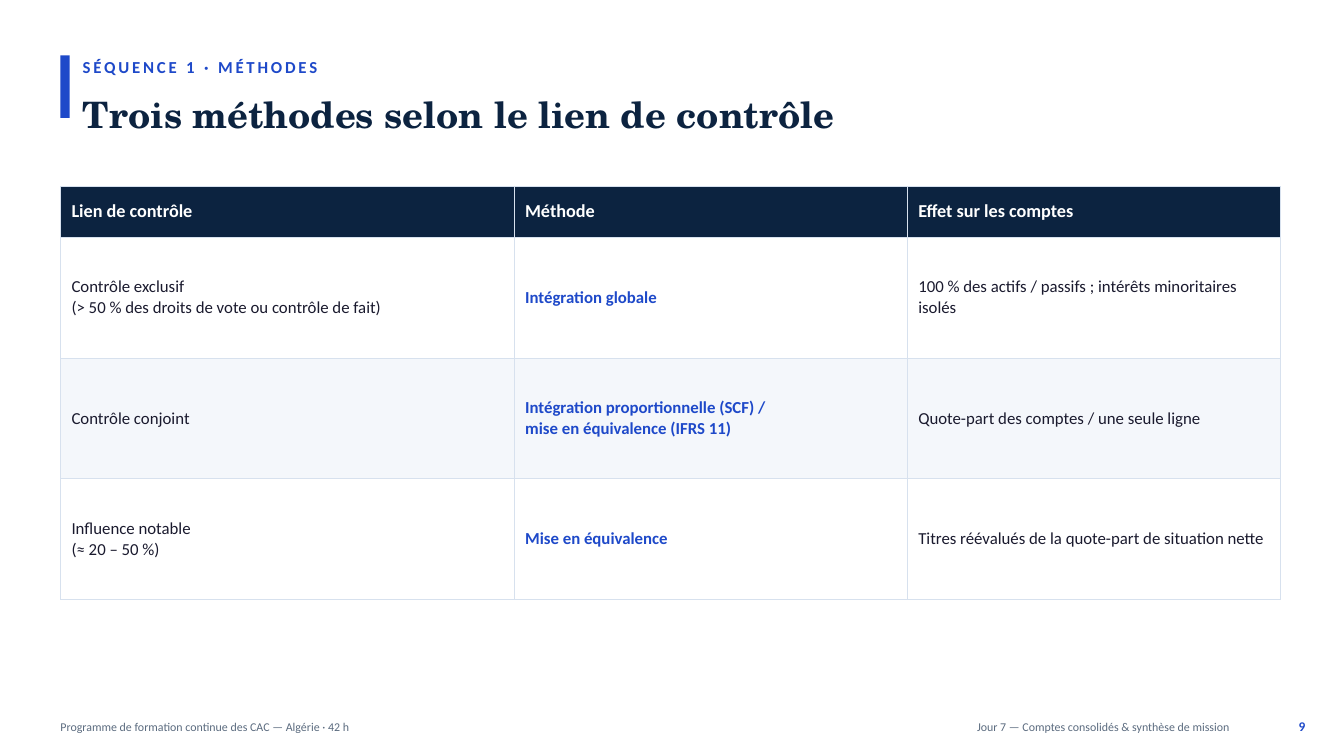
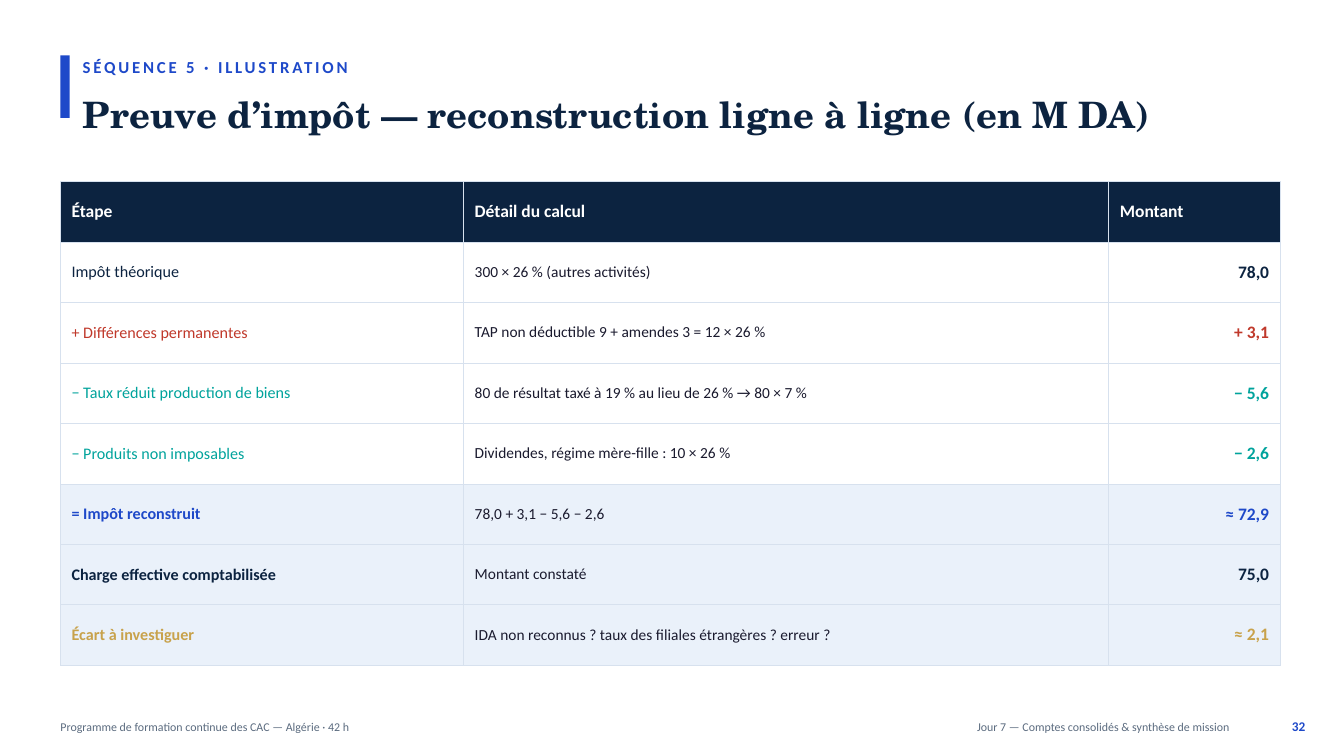
from lxml.etree import SubElement
from pptx import Presentation
from pptx.dml.color import RGBColor
from pptx.enum.shapes import MSO_SHAPE
from pptx.enum.text import MSO_ANCHOR, MSO_AUTO_SIZE, PP_ALIGN
from pptx.oxml.ns import qn
from pptx.util import Pt

NAVY = RGBColor(0x0C, 0x23, 0x40)
BLUE = RGBColor(0x1E, 0x49, 0xC9)
INK = RGBColor(0x1A, 0x1A, 0x2E)
SLATE = RGBColor(0x5B, 0x6B, 0x7F)
RED = RGBColor(0xC0, 0x39, 0x2B)
TEAL = RGBColor(0x00, 0xA3, 0x9C)
GOLD = RGBColor(0xC8, 0xA2, 0x4B)
WHITE = RGBColor(0xFF, 0xFF, 0xFF)
PALE = RGBColor(0xF4, 0xF7, 0xFB)
PALE_BLUE = RGBColor(0xEA, 0xF1, 0xFA)
BORDER = RGBColor(0xD7, 0xE1, 0xEE)

BODY_FONT = "Calibri"
TITLE_FONT = "TeX Gyre Schola"
LEFT = 43.2
HEADING_LEFT = 59.04
FOOTER_TOP = 508.32
FOOTER_LEFT_TEXT = "Programme de formation continue des CAC — Algérie · 42 h"
FOOTER_RIGHT_TEXT = "Jour 7 — Comptes consolidés & synthèse de mission"


def write_text(text_frame, text, size=12, color=INK, bold=False, font=BODY_FONT,
               align=PP_ALIGN.LEFT, spacing=None):
    """Write one paragraph per line of text, all in the same format."""
    for index, line in enumerate(text.split("\n")):
        paragraph = text_frame.add_paragraph() if index else text_frame.paragraphs[0]
        paragraph.alignment = align
        run = paragraph.add_run()
        run.text = line
        run.font.name = font
        run.font.size = Pt(size)
        run.font.bold = bold
        run.font.color.rgb = color
        if spacing:
            run.font._element.set("spc", str(spacing * 100))


def place_text(shape, box, text, **text_format):
    """Fit a text shape to its box, without insets, and write in it."""
    shape.left, shape.top, shape.width, shape.height = map(Pt, box)
    frame = shape.text_frame
    frame.word_wrap = True
    frame.auto_size = MSO_AUTO_SIZE.NONE
    frame.vertical_anchor = MSO_ANCHOR.MIDDLE
    frame.margin_left = frame.margin_top = frame.margin_right = frame.margin_bottom = 0
    write_text(frame, text, **text_format)


def add_text(slide, box, text, **text_format):
    place_text(slide.shapes.add_textbox(0, 0, 0, 0), box, text, **text_format)


def add_heading(slide, section, title):
    bar = slide.shapes.add_shape(MSO_SHAPE.RECTANGLE, Pt(LEFT), Pt(39.6), Pt(6.48), Pt(44.64))
    bar.shadow.inherit = False
    bar.fill.solid()
    bar.fill.fore_color.rgb = BLUE
    bar.line.fill.background()
    add_text(slide, (HEADING_LEFT, 36, 756, 23.04), section,
             color=BLUE, bold=True, spacing=2)
    place_text(slide.shapes.title, (HEADING_LEFT, 56.16, 856.8, 50.4), title,
               size=26, color=NAVY, bold=True, font=TITLE_FONT)


def add_footer(slide, number):
    add_text(slide, (LEFT, FOOTER_TOP, 576, 21.6), FOOTER_LEFT_TEXT, size=8.5, color=SLATE)
    add_text(slide, (590.4, FOOTER_TOP, 288, 21.6), FOOTER_RIGHT_TEXT,
             size=8.5, color=SLATE, align=PP_ALIGN.RIGHT)
    add_text(slide, (896.4, 506.88, 36, 23.04), str(number),
             size=9.5, color=BLUE, bold=True, align=PP_ALIGN.RIGHT)


def add_borders(cell):
    properties = cell._tc.get_or_add_tcPr()
    for index, side in enumerate(("a:lnL", "a:lnR", "a:lnT", "a:lnB")):
        line = SubElement(properties, qn(side), w=str(Pt(0.5)))
        fill = SubElement(line, qn("a:solidFill"))
        SubElement(fill, qn("a:srgbClr"), val=str(BORDER))
        properties.insert(index, line)


def add_table(slide, top, widths, heights, rows, margin):
    """Draw rows given as (fill, [(text, format), ...])."""
    table = slide.shapes.add_table(len(heights), len(widths), Pt(LEFT), Pt(top),
                                   Pt(sum(widths)), Pt(sum(heights))).table
    table.first_row = table.horz_banding = False
    for column, width in zip(table.columns, widths):
        column.width = Pt(width)
    for row, height, (fill, contents) in zip(table.rows, heights, rows):
        row.height = Pt(height)
        for cell, (text, text_format) in zip(row.cells, contents):
            cell.fill.solid()
            cell.fill.fore_color.rgb = fill
            add_borders(cell)
            cell.margin_left = cell.margin_right = Pt(7.92)
            cell.margin_top = cell.margin_bottom = Pt(margin)
            cell.vertical_anchor = MSO_ANCHOR.MIDDLE
            write_text(cell.text_frame, text, **text_format)


def header_row(labels, size):
    return NAVY, [(label, dict(size=size, color=WHITE, bold=True)) for label in labels]


def add_content_slide(presentation, section, title, number):
    slide = presentation.slides.add_slide(presentation.slide_layouts[5])
    add_heading(slide, section, title)
    add_footer(slide, number)
    return slide


def add_methods_slide(presentation):
    slide = add_content_slide(presentation, "SÉQUENCE 1 · MÉTHODES",
                              "Trois méthodes selon le lien de contrôle", 9)
    methods = [
        ("Contrôle exclusif\n(> 50 % des droits de vote ou contrôle de fait)",
         "Intégration globale",
         "100 % des actifs / passifs ; intérêts minoritaires isolés"),
        ("Contrôle conjoint",
         "Intégration proportionnelle (SCF) /\nmise en équivalence (IFRS 11)",
         "Quote-part des comptes / une seule ligne"),
        ("Influence notable\n(≈ 20 – 50 %)",
         "Mise en équivalence",
         "Titres réévalués de la quote-part de situation nette"),
    ]
    rows = [header_row(("Lien de contrôle", "Méthode", "Effet sur les comptes"), 13)]
    for index, (link, method, effect) in enumerate(methods):
        rows.append((PALE if index % 2 else WHITE,
                     [(link, {}), (method, dict(color=BLUE, bold=True)), (effect, {})]))
    add_table(slide, 133.2, (324, 280.8, 266.4), [36] + [86.4] * len(methods), rows, 5.04)


def add_tax_proof_slide(presentation):
    slide = add_content_slide(presentation, "SÉQUENCE 5 · ILLUSTRATION",
                              "Preuve d’impôt — reconstruction ligne à ligne (en M DA)", 32)
    steps = [
        ("Impôt théorique", "300 × 26 % (autres activités)", "78,0", NAVY, False),
        ("+ Différences permanentes", "TAP non déductible 9 + amendes 3 = 12 × 26 %",
         "+ 3,1", RED, False),
        ("− Taux réduit production de biens",
         "80 de résultat taxé à 19 % au lieu de 26 % → 80 × 7 %", "− 5,6", TEAL, False),
        ("− Produits non imposables", "Dividendes, régime mère-fille : 10 × 26 %",
         "− 2,6", TEAL, False),
        ("= Impôt reconstruit", "78,0 + 3,1 − 5,6 − 2,6", "≈ 72,9", BLUE, True),
        ("Charge effective comptabilisée", "Montant constaté", "75,0", NAVY, True),
        ("Écart à investiguer", "IDA non reconnus ? taux des filiales étrangères ? erreur ?",
         "≈ 2,1", GOLD, True),
    ]
    rows = [header_row(("Étape", "Détail du calcul", "Montant"), 12.5)]
    for step, detail, amount, color, is_result in steps:
        rows.append((PALE_BLUE if is_result else WHITE, [
            (step, dict(size=11.5, color=color, bold=is_result)),
            (detail, dict(size=11)),
            (amount, dict(size=12.5, color=color, bold=True, align=PP_ALIGN.RIGHT)),
        ]))
    add_table(slide, 129.6, (288, 460.8, 122.4), [43.2] * len(rows), rows, 2.88)


def main():
    presentation = Presentation()
    presentation.slide_width = Pt(960)
    presentation.slide_height = Pt(540)
    add_methods_slide(presentation)
    add_tax_proof_slide(presentation)
    presentation.save("out.pptx")


if __name__ == "__main__":
    main()
